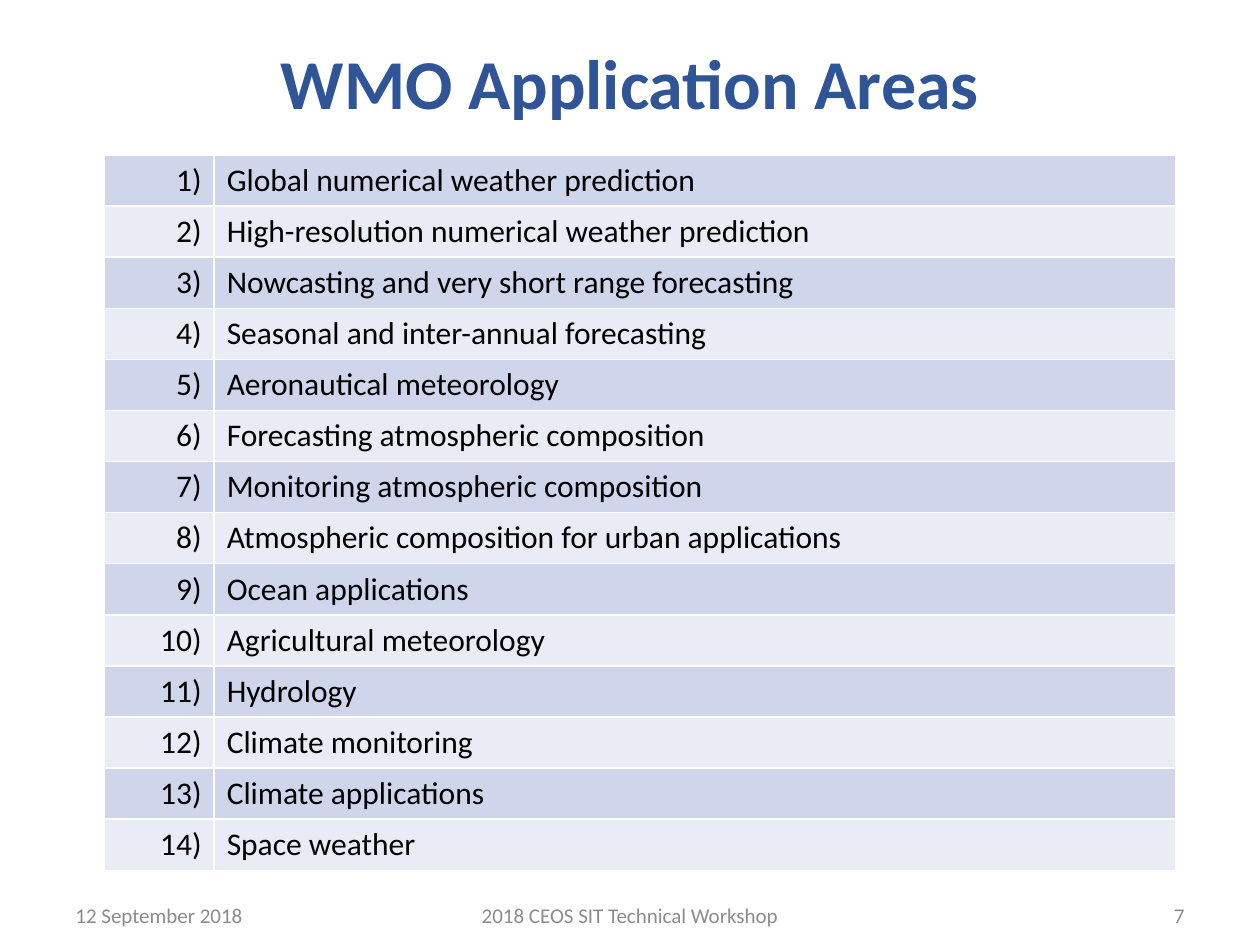
from lxml import etree
from pptx import Presentation
from pptx.dml.color import RGBColor
from pptx.enum.text import MSO_ANCHOR, PP_ALIGN
from pptx.oxml.ns import qn
from pptx.util import Inches, Pt

TITLE_BLUE = RGBColor(0x2F, 0x55, 0x97)
GREY = RGBColor(0x8C, 0x8C, 0x8C)
BLACK = RGBColor(0, 0, 0)
WHITE = RGBColor(0xFF, 0xFF, 0xFF)
BANDS = [RGBColor(0xCF, 0xD5, 0xEA), RGBColor(0xE9, 0xEB, 0xF5)]

AREAS = [
    "Global numerical weather prediction",
    "High-resolution numerical weather prediction",
    "Nowcasting and very short range forecasting",
    "Seasonal and inter-annual forecasting",
    "Aeronautical meteorology",
    "Forecasting atmospheric composition",
    "Monitoring atmospheric composition",
    "Atmospheric composition for urban applications",
    "Ocean applications",
    "Agricultural meteorology",
    "Hydrology",
    "Climate monitoring",
    "Climate applications",
    "Space weather",
]


def write(tf, text, size, color, align, bold=False):
    p = tf.paragraphs[0]
    p.alignment = align
    r = p.add_run()
    r.text = text
    r.font.name = "Calibri"
    r.font.size = Pt(size)
    r.font.bold = bold
    r.font.color.rgb = color


def add_borders(cell):
    """Give all four sides of the cell a 1 pt white line."""
    tc_pr = cell._tc.get_or_add_tcPr()
    for i, side in enumerate(("lnL", "lnR", "lnT", "lnB")):
        ln = etree.Element(qn(f"a:{side}"), w=str(Pt(1)))
        fill = etree.SubElement(ln, qn("a:solidFill"))
        etree.SubElement(fill, qn("a:srgbClr"), val=str(WHITE))
        tc_pr.insert(i, ln)


prs = Presentation()
prs.slide_width, prs.slide_height = Inches(10), Inches(7.5)
s = prs.slides.add_slide(prs.slide_layouts[6])

# Title and footer
for text, left, top, width, height, size, color, align, bold in [
    ("WMO Application Areas", 0.5, 0.21, 9, 0.88, 40, TITLE_BLUE, PP_ALIGN.CENTER, True),
    ("12 September 2018", 0.5, 7.14, 2.25, 0.24, 12, GREY, PP_ALIGN.LEFT, False),
    ("2018 CEOS SIT Technical Workshop", 2.56, 7.14, 4.88, 0.24, 12, GREY, PP_ALIGN.CENTER, False),
    ("7", 7.25, 7.14, 2.25, 0.24, 12, GREY, PP_ALIGN.RIGHT, False),
]:
    box = s.shapes.add_textbox(Inches(left), Inches(top), Inches(width), Inches(height))
    tf = box.text_frame
    tf.word_wrap = True
    tf.vertical_anchor = MSO_ANCHOR.MIDDLE
    write(tf, text, size, color, align, bold)

# Numbered table of application areas
table = s.shapes.add_table(
    len(AREAS), 2, Inches(0.83), Inches(1.23), Inches(8.5), Inches(5.68)
).table
table.first_row = False
table.columns[0].width = Inches(0.87)
table.columns[1].width = Inches(7.63)
for i, area in enumerate(AREAS):
    row = [(f"{i + 1})", PP_ALIGN.RIGHT), (area, PP_ALIGN.LEFT)]
    for j, (text, align) in enumerate(row):
        cell = table.cell(i, j)
        cell.fill.solid()
        cell.fill.fore_color.rgb = BANDS[i % 2]
        add_borders(cell)
        write(cell.text_frame, text, 18, BLACK, align)

prs.save("out.pptx")
